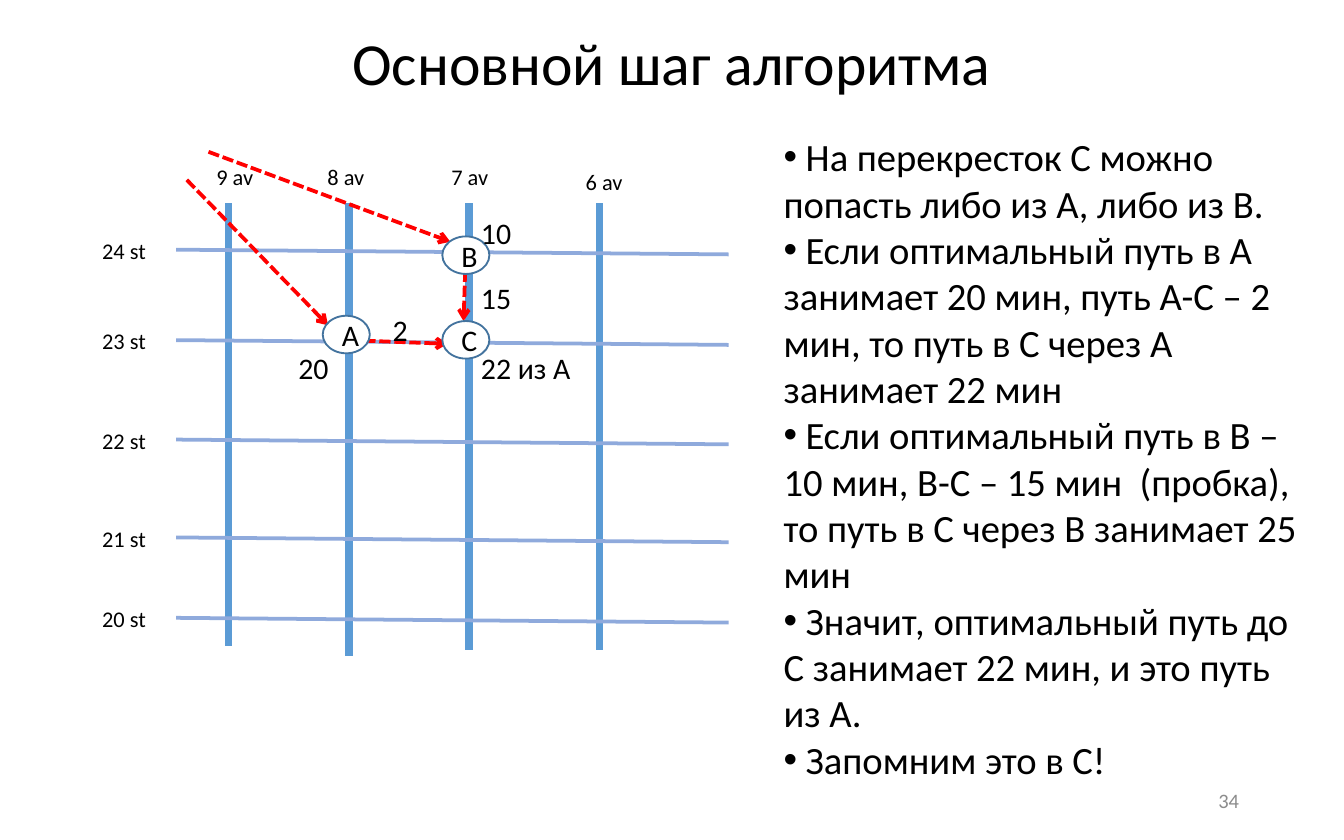
"""Build the slide that explains the main step of the shortest-path algorithm."""
from dataclasses import dataclass

from lxml import etree
from pptx import Presentation
from pptx.dml.color import RGBColor
from pptx.enum.dml import MSO_LINE
from pptx.enum.shapes import MSO_CONNECTOR, MSO_SHAPE
from pptx.enum.text import MSO_ANCHOR, PP_ALIGN
from pptx.oxml.ns import qn
from pptx.util import Cm, Pt

STRAIGHT = MSO_CONNECTOR.STRAIGHT
OVAL = MSO_SHAPE.OVAL
DASH = MSO_LINE.SQUARE_DOT
TOP, MIDDLE = MSO_ANCHOR.TOP, MSO_ANCHOR.MIDDLE
LEFT, CENTER, RIGHT = PP_ALIGN.LEFT, PP_ALIGN.CENTER, PP_ALIGN.RIGHT
TITLE_ONLY = 5


@dataclass(frozen=True)
class Theme:
    """Fonts, type sizes in points and colours of the slide."""
    font: str = "Calibri"
    title: float = 32
    body: float = 20.7
    value: float = 16
    label: float = 12
    number: float = 11
    ink: str = "000000"
    muted: str = "8C8C8C"
    paper: str = "FFFFFF"
    avenue: str = "5B9BD5"
    street: str = "8FAADC"
    route: str = "FF0000"
    outline: str = "43739E"


class SlideBuilder:
    """Draws themed elements on the current slide, with lengths in centimetres."""

    def __init__(self, slide, theme):
        self.slide = slide
        self.theme = theme

    def fill_text(self, shape, paragraphs, size, color=None, align=LEFT, anchor=TOP,
                  wrap=True, insets=(0.23, 0.11), bullet=None):
        """Fill a shape with formatted paragraphs."""
        frame = shape.text_frame
        frame.text = "\n".join(paragraphs)
        frame.word_wrap = wrap
        frame.vertical_anchor = anchor
        frame.margin_left = frame.margin_right = Cm(insets[0])
        frame.margin_top = frame.margin_bottom = Cm(insets[1])
        for paragraph in frame.paragraphs:
            paragraph.alignment = align
            if bullet:
                properties = paragraph._p.get_or_add_pPr()
                etree.SubElement(properties, qn("a:buFont"), typeface="Arial")
                etree.SubElement(properties, qn("a:buChar"), char=bullet)
            for run in paragraph.runs:
                run.font.name = self.theme.font
                run.font.size = Pt(size)
                run.font.color.rgb = RGBColor.from_string(color or self.theme.ink)

    def title(self, text, left, top, width, height):
        """Place and fill the title placeholder."""
        heading = self.slide.shapes.title
        heading.left, heading.top = Cm(left), Cm(top)
        heading.width, heading.height = Cm(width), Cm(height)
        self.fill_text(heading, [text], self.theme.title, align=CENTER)

    def text(self, paragraphs, left, top, width, height, size, **style):
        """Add a text box."""
        box = self.slide.shapes.add_textbox(Cm(left), Cm(top), Cm(width), Cm(height))
        self.fill_text(box, paragraphs, size, **style)

    def line(self, start, end, color, weight):
        """Add a straight line and return it."""
        connector = self.slide.shapes.add_connector(
            STRAIGHT, *(Cm(value) for value in (*start, *end)))
        connector.line.color.rgb = RGBColor.from_string(color)
        connector.line.width = Pt(weight)
        etree.SubElement(connector._element.spPr, qn("a:effectLst"))
        return connector

    def route(self, start, end):
        """Add a dashed arrow."""
        arrow = self.line(start, end, self.theme.route, 2)
        arrow.line.dash_style = DASH
        etree.SubElement(arrow.line._get_or_add_ln(), qn("a:tailEnd"), type="arrow")

    def crossing(self, name, left, top):
        """Add a named crossing."""
        node = self.slide.shapes.add_shape(OVAL, Cm(left), Cm(top), Cm(0.89), Cm(0.71))
        node.shadow.inherit = False
        node.fill.solid()
        node.fill.fore_color.rgb = RGBColor.from_string(self.theme.paper)
        node.line.color.rgb = RGBColor.from_string(self.theme.outline)
        node.line.width = Pt(1)
        self.fill_text(node, [name], self.theme.value, align=CENTER, anchor=MIDDLE)


AVENUES = [("9 av", 4.32, 12.22, 3.84, 2.95), ("8 av", 6.6, 12.4, 5.94, 2.95),
           ("7 av", 8.86, 12.29, 8.28, 2.95), ("6 av", 11.33, 12.29, 10.82, 3.05)]
STREETS = [("20 st", 11.68), ("21 st", 10.16), ("22 st", 8.31),
           ("23 st", 6.43), ("24 st", 4.72)]
ROUTES = [((6.6, 6.43), (8.46, 6.5)), ((8.81, 4.55), (8.76, 6.07)),
          ((3.53, 3.4), (6.2, 6.15)), ((3.94, 2.87), (8.51, 4.57))]
CROSSINGS = [("A", 6.1, 5.97), ("B", 8.36, 4.47), ("C", 8.36, 6.07)]
COSTS = [("20", 5.41, 6.5, 1.04), ("2", 7.19, 5.79, 1.07), ("15", 8.86, 5.18, 1.07),
         ("10", 8.86, 3.94, 1.07), ("22 из A", 8.86, 6.5, 2.16)]
STEPS = [
    " На перекресток C можно попасть либо из A, либо из B.",
    " Если оптимальный путь в A занимает 20 мин, путь A-C – 2 мин, "
    "то путь в C через A занимает 22 мин",
    " Если оптимальный путь в B – 10 мин, B-C – 15 мин  (пробка), "
    "то путь в C через B занимает 25 мин",
    " Значит, оптимальный путь до C занимает 22 мин, и это путь из A.",
    " Запомним это в C!",
]


def main():
    """Build and save the slide."""
    theme = Theme()
    deck = Presentation()
    deck.slide_width, deck.slide_height = Cm(25.4), Cm(15.88)
    slide = deck.slides.add_slide(deck.slide_layouts[TITLE_ONLY])
    builder = SlideBuilder(slide, theme)
    label_style = {"size": theme.label, "wrap": False, "insets": (0.25, 0.13)}

    builder.title("Основной шаг алгоритма", 1.37, 0.38, 22.66, 1.6)
    for _, x, bottom, _, _ in AVENUES:
        builder.line((x, 3.84), (x, bottom), theme.avenue, 4)
    for name, y in STREETS:
        builder.line((3.33, y), (13.77, y + 0.09), theme.street, 2)
        builder.text([name], 1.68, y - 0.37, 1.35, 0.76, **label_style)
    for name, _, _, left, top in AVENUES:
        builder.text([name], left, top, 1.22, 0.76, **label_style)
    for start, end in ROUTES:
        builder.route(start, end)

    builder.text(STEPS, 14.58, 2.41, 10.21, 12.8, theme.body, bullet="•")
    for name, left, top in CROSSINGS:
        builder.crossing(name, left, top)
    for cost, left, top, width in COSTS:
        builder.text([cost], left, top, width, 0.91, theme.value)
    builder.text(["34"], 17.93, 14.71, 5.72, 0.84, theme.number,
                 color=theme.muted, align=RIGHT, anchor=MIDDLE)
    deck.save("out.pptx")


if __name__ == "__main__":
    main()
